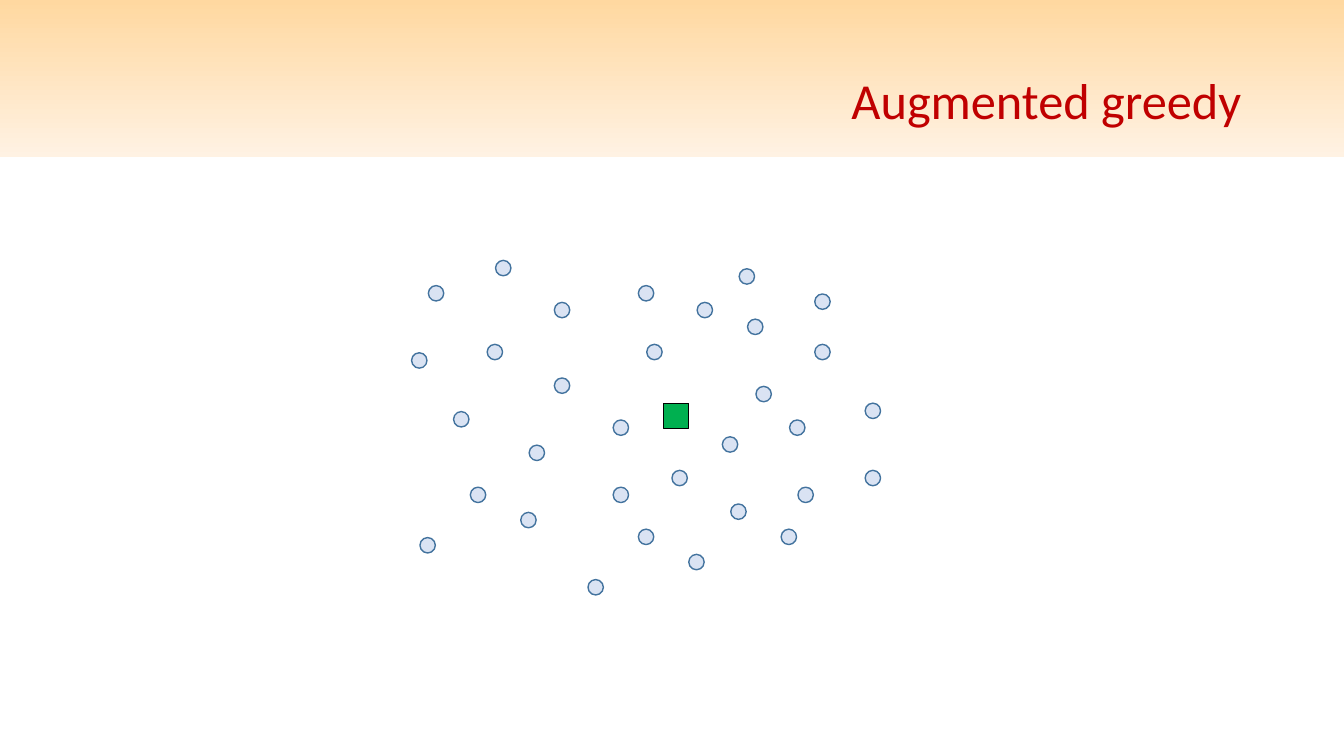
from dataclasses import dataclass

from pptx import Presentation
from pptx.dml.color import RGBColor
from pptx.enum import shapes, text
from pptx.util import Pt


@dataclass(frozen=True)
class Theme:
    band_top: RGBColor = RGBColor.from_string("FFD8A0")
    band_bottom: RGBColor = RGBColor.from_string("FFF2E3")
    title: RGBColor = RGBColor.from_string("C00000")
    depot: RGBColor = RGBColor.from_string("00B050")
    depot_line: RGBColor = RGBColor.from_string("000000")
    client: RGBColor = RGBColor.from_string("DAE3F3")
    client_line: RGBColor = RGBColor.from_string("43739E")
    font: str = "Calibri"
    title_size: int = 36


THEME = Theme()
SLIDE_WIDTH, SLIDE_HEIGHT = 960, 540

# Positions in the field are (column, row) steps of a fine grid
GRID_STEP = 6
CLIENT_SIZE, DEPOT_SIZE = 11, 18
DEPOT = (30, 17)
CLIENTS = [
    (17, 5), (2, 3), (17, 14), (38, 29), (27, 3), (40, 7), (45, 19), (24, 27),
    (5, 18), (1, 33), (13, 30), (14, 22), (7, 27), (9, 10), (0, 11), (10, 0),
    (28, 10), (41, 15), (48, 10), (39, 1), (46, 27), (37, 21), (24, 19), (48, 4),
    (54, 17), (54, 25), (44, 32), (21, 38), (33, 35), (27, 32), (31, 25), (34, 5),
]


def add_header(slide, left, top, width, height):
    # Gradient band, fading downwards
    band = slide.shapes.add_shape(
        shapes.MSO_SHAPE.RECTANGLE, Pt(left), Pt(top), Pt(width), Pt(height))
    band.shadow.inherit = False
    band.line.fill.background()
    band.fill.gradient()
    band.fill.gradient_angle = 270
    for stop, color in zip(band.fill.gradient_stops,
                           (THEME.band_top, THEME.band_bottom)):
        stop.color.rgb = color

    # Title, brought in front of the band
    title = slide.shapes.title
    slide.shapes.element.append(title.element)
    title.left, title.top = Pt(left + 66), Pt(top + 21.6)
    title.width, title.height = Pt(width - 132), Pt(104.4)
    frame = title.text_frame
    frame.text = "Augmented greedy"
    frame.word_wrap = True
    frame.auto_size = text.MSO_AUTO_SIZE.NONE
    frame.vertical_anchor = text.MSO_ANCHOR.MIDDLE
    paragraph = frame.paragraphs[0]
    paragraph.alignment = text.PP_ALIGN.RIGHT
    paragraph.line_spacing = 0.9
    font = paragraph.runs[0].font
    font.name, font.size = THEME.font, Pt(THEME.title_size)
    font.color.rgb = THEME.title


def add_field(slide, left, top):
    def add_site(kind, position, size, fill, line):
        column, row = position
        site = slide.shapes.add_shape(
            kind, Pt(left + column * GRID_STEP), Pt(top + row * GRID_STEP),
            Pt(size), Pt(size))
        site.shadow.inherit = False
        site.fill.solid()
        site.fill.fore_color.rgb = fill
        site.line.color.rgb = line
        site.line.width = Pt(1)

    # Depot square and the clients around it
    add_site(shapes.MSO_SHAPE.RECTANGLE, DEPOT, DEPOT_SIZE,
             THEME.depot, THEME.depot_line)
    for client in CLIENTS:
        add_site(shapes.MSO_SHAPE.OVAL, client, CLIENT_SIZE,
                 THEME.client, THEME.client_line)


def main():
    deck = Presentation()
    deck.slide_width, deck.slide_height = Pt(SLIDE_WIDTH), Pt(SLIDE_HEIGHT)
    title_only = deck.slide_layouts.get_by_name("Title Only")
    slide = deck.slides.add_slide(title_only)
    add_header(slide, 0, 0, SLIDE_WIDTH, 112)
    add_field(slide, 294, 186)
    deck.save("out.pptx")


if __name__ == "__main__":
    main()
